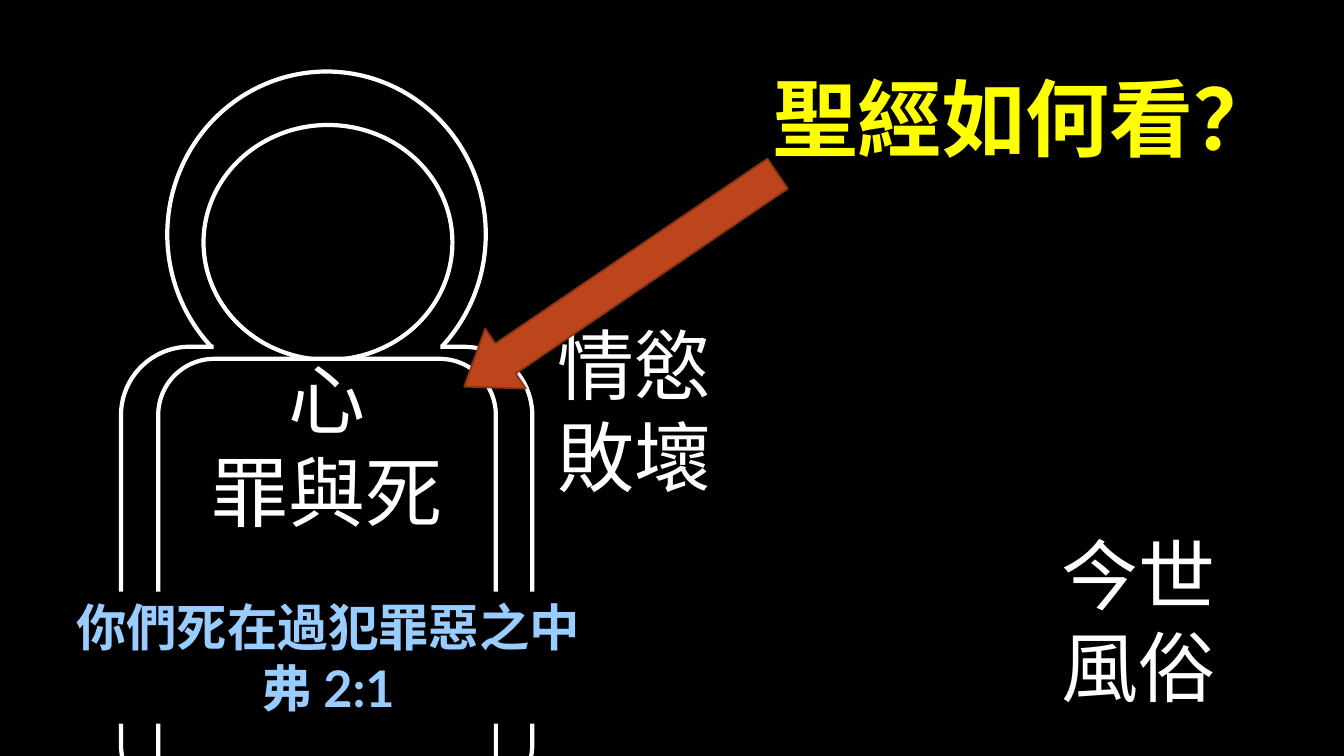
from pptx import Presentation
from pptx.dml.color import RGBColor
from pptx.enum.shapes import MSO_SHAPE
from pptx.enum.text import MSO_ANCHOR, MSO_AUTO_SIZE, PP_ALIGN
from pptx.util import Pt

OVAL, RECT = MSO_SHAPE.OVAL, MSO_SHAPE.RECTANGLE
ROUND, DOWN = MSO_SHAPE.ROUNDED_RECTANGLE, MSO_SHAPE.DOWN_ARROW
TOP, GROW = MSO_ANCHOR.TOP, MSO_AUTO_SIZE.SHAPE_TO_FIT_TEXT
CENTER, RIGHT = PP_ALIGN.CENTER, PP_ALIGN.RIGHT
TITLE_ONLY = 5

COLORS = {
    "black": "000000", "white": "FFFFFF", "yellow": "FFFF00",
    "blue": "99CCFF", "rust": "BC451B", "brown": "8B3314",
}
FONTS = {
    "title": {"name": "Times New Roman", "size": Pt(60), "bold": True},
    "label": {"name": "Roboto", "size": Pt(55), "bold": False},
    "verse": {"name": "Lato", "size": Pt(36), "bold": True},
}
INKS = {"title": "yellow", "label": "white", "verse": "blue"}
FRAME = {"word_wrap": True, "auto_size": GROW, "vertical_anchor": TOP}


def color(name):
    return RGBColor.from_string(COLORS[name])


def apply(item, values):
    for key, value in values.items():
        setattr(item, key, value)


class Board:
    """Holds the text styles and the slide being drawn."""

    def __init__(self, slide):
        self.slide = slide
        self.fonts = FONTS
        self.inks = INKS
        self.paint(slide.background, "black")

    def paint(self, item, name):
        item.fill.solid()
        item.fill.fore_color.rgb = color(name)

    def shape(self, kind, box, fill="black", line=None, width=3):
        shape = self.slide.shapes.add_shape(kind, *map(Pt, box))
        shape.shadow.inherit = False
        self.paint(shape, fill)
        if line:
            shape.line.color.rgb = color(line)
            shape.line.width = Pt(width)
        else:
            shape.line.fill.background()
        return shape

    def letter(self, shape, lines, style, align):
        """Fill a shape with styled lines, one paragraph each."""
        frame = shape.text_frame
        frame.text = "\n".join(lines)
        apply(frame, FRAME)
        for para in frame.paragraphs:
            para.alignment = align
            for run in para.runs:
                apply(run.font, self.fonts[style])
                run.font.color.rgb = color(self.inks[style])

    def title(self, text, box):
        title = self.slide.shapes.title
        sides = ("left", "top", "width", "height")
        apply(title, dict(zip(sides, map(Pt, box))))
        self.letter(title, [text], "title", RIGHT)

    def text(self, lines, box, style="label"):
        area = self.slide.shapes.add_textbox(*map(Pt, box))
        self.letter(area, lines, style, CENTER)
        return area

    def arrow(self, box, angle, head):
        arrow = self.shape(DOWN, box, "rust", "brown", 1.25)
        arrow.rotation = angle
        arrow.adjustments[1] = head


def main():
    deck = Presentation()
    deck.slide_width, deck.slide_height = Pt(960), Pt(540)
    board = Board(deck.slides.add_slide(deck.slide_layouts[TITLE_ONLY]))

    board.title("聖經如何看？", (410.4, 43.9, 509, 79.9))

    figure = [
        (OVAL, (119.5, 51.1, 227.5, 232.6), "white"),
        (ROUND, (86.4, 247.7, 293.8, 332.6), "white"),
        (RECT, (152.6, 236.9, 162, 25.2), None),
        (OVAL, (145.4, 89.3, 177.8, 167.8), "white"),
        (ROUND, (113, 256.3, 241.2, 326.2), "white"),
    ]
    for kind, box, line in figure:
        board.shape(kind, box, line=line)

    board.text(["情慾敗壞"], (374.4, 223.2, 157, 140.4))
    board.text(["今世風俗"], (734.4, 373, 157, 140.4))
    board.text(["心", "罪與死"], (113, 247.7, 241.2, 140.4))
    board.arrow((417.6, 64.8, 51.8, 270.7), 55.8, 0.69)

    verse = board.text(["你們死在過犯罪惡之中", "弗 2:1"],
                       (38.9, 422.6, 391, 94.3), "verse")
    board.paint(verse, "black")

    deck.save("out.pptx")


if __name__ == "__main__":
    main()
